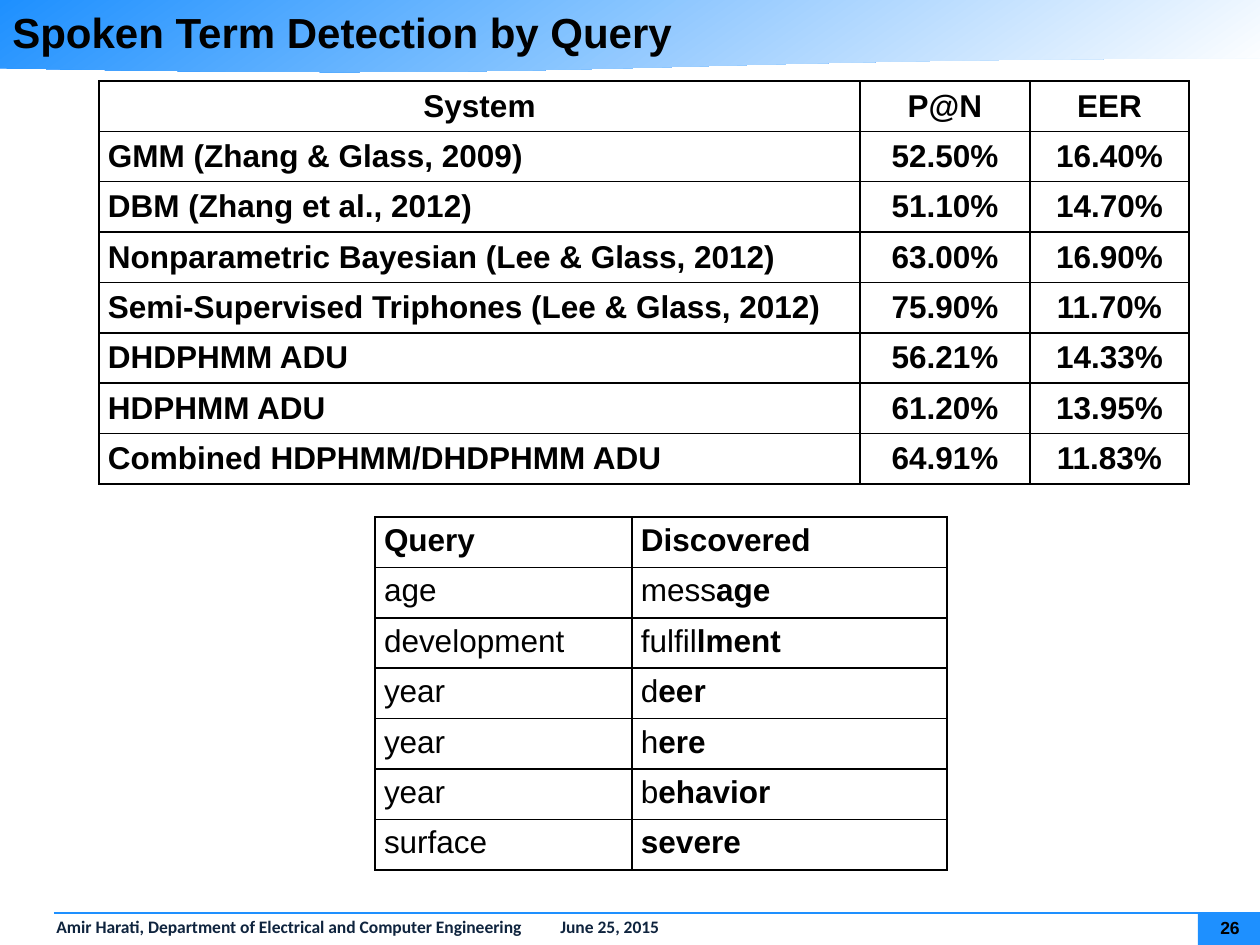
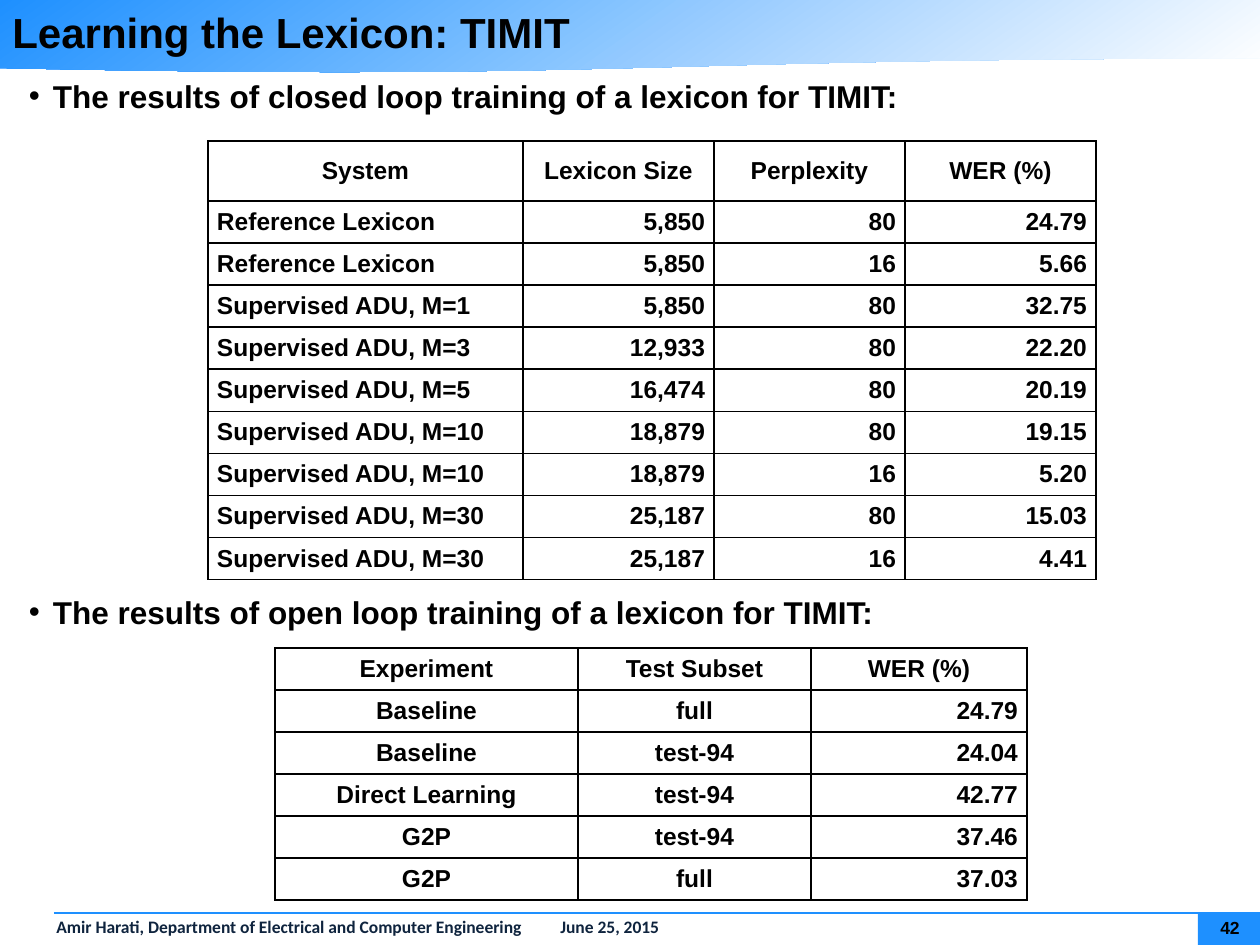
from lxml import etree
from pptx import Presentation
from pptx import util as u
from pptx.dml.color import RGBColor
from pptx.enum import shapes, text
from pptx.oxml.ns import qn

COLOURS = {"blue": "1E90FF", "white": "FFFFFF", "black": "000000", "navy": "0F243E"}
LEFT, CENTER, RIGHT = text.PP_ALIGN.LEFT, text.PP_ALIGN.CENTER, text.PP_ALIGN.RIGHT
MIDDLE, TOP = text.MSO_ANCHOR.MIDDLE, text.MSO_ANCHOR.TOP

FOOTER = "Amir Harati, Department of Electrical and Computer Engineering\tJune 25, 2015"

# In a cell, text before "|" is regular and text after it is bold.
SLIDES = [
    {
        "title": "Spoken Term Detection by Query",
        "number": 26,
        "bullets": [],
        "tables": [
            {
                "at": (99, 81), "columns": [761, 170, 159], "height": 403, "size": 18,
                "heading": CENTER, "align": [LEFT, CENTER, CENTER], "anchor": MIDDLE,
                "rows": [
                    ("System", "P@N", "EER"),
                    ("GMM (Zhang & Glass, 2009)", "52.50%", "16.40%"),
                    ("DBM (Zhang et al., 2012)", "51.10%", "14.70%"),
                    ("Nonparametric Bayesian (Lee & Glass, 2012)", "63.00%", "16.90%"),
                    ("Semi-Supervised Triphones (Lee & Glass, 2012)", "75.90%", "11.70%"),
                    ("DHDPHMM ADU", "56.21%", "14.33%"),
                    ("HDPHMM ADU", "61.20%", "13.95%"),
                    ("Combined HDPHMM/DHDPHMM ADU", "64.91%", "11.83%"),
                ],
            },
            {
                "at": (375, 517), "columns": [257, 315], "height": 353, "size": 18,
                "heading": LEFT, "align": [LEFT, LEFT], "anchor": TOP,
                "rows": [
                    ("Query", "Discovered"),
                    ("age|", "mess|age"),
                    ("development|", "fulfil|lment"),
                    ("year|", "d|eer"),
                    ("year|", "h|ere"),
                    ("year|", "b|ehavior"),
                    ("surface|", "severe"),
                ],
            },
        ],
    },
    {
        "title": "Learning the Lexicon: TIMIT",
        "number": 42,
        "bullets": [
            (77, "The results of closed loop training of a lexicon for TIMIT:"),
            (593, "The results of open loop training of a lexicon for TIMIT:"),
        ],
        "tables": [
            {
                "at": (208, 141), "columns": [315, 191, 191, 191], "height": 439,
                "header": 60, "size": 14, "heading": CENTER,
                "align": [LEFT, RIGHT, RIGHT, RIGHT], "anchor": MIDDLE,
                "rows": [
                    ("System", "Lexicon Size", "Perplexity", "WER (%)"),
                    ("Reference Lexicon", "5,850", "80", "24.79"),
                    ("Reference Lexicon", "5,850", "16", "5.66"),
                    ("Supervised ADU, M=1", "5,850", "80", "32.75"),
                    ("Supervised ADU, M=3", "12,933", "80", "22.20"),
                    ("Supervised ADU, M=5", "16,474", "80", "20.19"),
                    ("Supervised ADU, M=10", "18,879", "80", "19.15"),
                    ("Supervised ADU, M=10", "18,879", "16", "5.20"),
                    ("Supervised ADU, M=30", "25,187", "80", "15.03"),
                    ("Supervised ADU, M=30", "25,187", "16", "4.41"),
                ],
            },
            {
                "at": (275, 648), "columns": [303, 233, 216], "height": 252, "size": 14,
                "heading": CENTER, "align": [CENTER, CENTER, RIGHT], "anchor": MIDDLE,
                "rows": [
                    ("Experiment", "Test Subset", "WER (%)"),
                    ("Baseline", "full", "24.79"),
                    ("Baseline", "test-94", "24.04"),
                    ("Direct Learning", "test-94", "42.77"),
                    ("G2P", "test-94", "37.46"),
                    ("G2P", "full", "37.03"),
                ],
            },
        ],
    },
]


def px(length):
    return u.Emu(round(length * 914400 / 126))


def rgb(name):
    return RGBColor.from_string(COLOURS[name])


def style(paragraph, size, colour="black", name="Arial", bold=True):
    font = paragraph.font
    font.size, font.name, font.bold = u.Pt(size), name, bold
    font.color.rgb = rgb(colour)


def add_text(slide, box, words, inset=True):
    frame = slide.shapes.add_textbox(*map(px, box)).text_frame
    frame.word_wrap = True
    if not inset:
        frame.margin_left = frame.margin_right = frame.margin_top = frame.margin_bottom = 0
    paragraph = frame.paragraphs[0]
    paragraph.text = words
    return frame, paragraph


def add_block(slide, kind, box):
    shape = slide.shapes.add_shape(kind, *map(px, box))
    shape.shadow.inherit = False
    shape.line.fill.background()
    return shape


def set_indent(paragraph, margin, indent):
    properties = paragraph._p.get_or_add_pPr()
    properties.set("marL", str(px(margin)))
    properties.set("indent", str(px(indent)))
    return properties


def add_frame(slide, number):
    band = add_block(slide, shapes.MSO_SHAPE.FLOWCHART_DOCUMENT, (0, 0, 1261, 73))
    band.fill.gradient()
    band.fill.gradient_angle = 305
    for stop, colour in zip(band.fill.gradient_stops, ("blue", "white")):
        stop.color.rgb = rgb(colour)

    number_block = add_block(slide, shapes.MSO_SHAPE.RECTANGLE, (1198, 912, 63, 33))
    number_block.fill.solid()
    number_block.fill.fore_color.rgb = rgb("blue")

    _, footer = add_text(slide, (5, 911, 1256, 33), FOOTER)
    footer.line_spacing = 0.95
    tabs = etree.SubElement(set_indent(footer, 39, 0), qn("a:tabLst"))
    etree.SubElement(tabs, qn("a:tab"), pos=str(px(1173)), algn="r")
    style(footer, 10, "navy", "Calibri")

    rule = slide.shapes.add_connector(
        shapes.MSO_CONNECTOR.STRAIGHT, *map(px, (54, 913, 1260, 913)))
    rule.line.color.rgb = rgb("blue")
    rule.line.width = u.Pt(1.5)
    etree.SubElement(rule._element.spPr, qn("a:effectLst"))

    frame, page = add_text(slide, (1205, 917, 50, 21), str(number), inset=False)
    frame.vertical_anchor = MIDDLE
    page.alignment = CENTER
    style(page, 10)


def add_title(slide, title):
    _, paragraph = add_text(slide, (0, 0, 1260, 54), title)
    style(paragraph, 24)


def add_bullet(slide, top, words):
    _, paragraph = add_text(slide, (29, top, 897, 38), words, inset=False)
    paragraph.space_after = u.Pt(6)
    properties = set_indent(paragraph, 24, -24)
    etree.SubElement(properties, qn("a:buFont"), typeface="Arial")
    etree.SubElement(properties, qn("a:buChar"), char="•")
    style(paragraph, 18)


def add_borders(cell):
    properties = cell._tc.get_or_add_tcPr()
    for side in ("lnL", "lnR", "lnT", "lnB"):
        line = etree.SubElement(properties, qn(f"a:{side}"), w=str(u.Pt(1)))
        fill = etree.SubElement(line, qn("a:solidFill"))
        etree.SubElement(fill, qn("a:srgbClr"), val=COLOURS["black"])


def fill_cell(cell, words, size, alignment, anchor):
    add_borders(cell)
    cell.fill.background()
    cell.vertical_anchor = anchor
    cell.margin_left = cell.margin_right = px(9)
    cell.margin_top = cell.margin_bottom = px(6)
    paragraph = cell.text_frame.paragraphs[0]
    paragraph.alignment = alignment
    regular, _, strong = words.rpartition("|")
    style(paragraph, size, bold=not regular)
    for part, bold in ((regular, False), (strong, True)):
        if part:
            run = paragraph.add_run()
            run.text = part
            run.font.bold = bold


def add_table(slide, data):
    rows, columns, height = data["rows"], data["columns"], data["height"]
    header = data.get("header", height / len(rows))
    table = slide.shapes.add_table(
        len(rows), len(columns), *map(px, (*data["at"], sum(columns), height))).table
    table.first_row = table.horz_banding = False
    for column, width in zip(table.columns, columns):
        column.width = px(width)
    for index, (row, values) in enumerate(zip(table.rows, rows)):
        row.height = px((height - header) / (len(rows) - 1) if index else header)
        for cell, words, alignment in zip(row.cells, values, data["align"]):
            fill_cell(cell, words, data["size"],
                      alignment if index else data["heading"], data["anchor"])


def main():
    presentation = Presentation()
    presentation.slide_width, presentation.slide_height = px(1260), px(945)
    for content in SLIDES:
        slide = presentation.slides.add_slide(presentation.slide_layouts[6])
        add_frame(slide, content["number"])
        for table in content["tables"]:
            add_table(slide, table)
        for top, words in content["bullets"]:
            add_bullet(slide, top, words)
        add_title(slide, content["title"])
    presentation.save("out.pptx")


if __name__ == "__main__":
    main()
